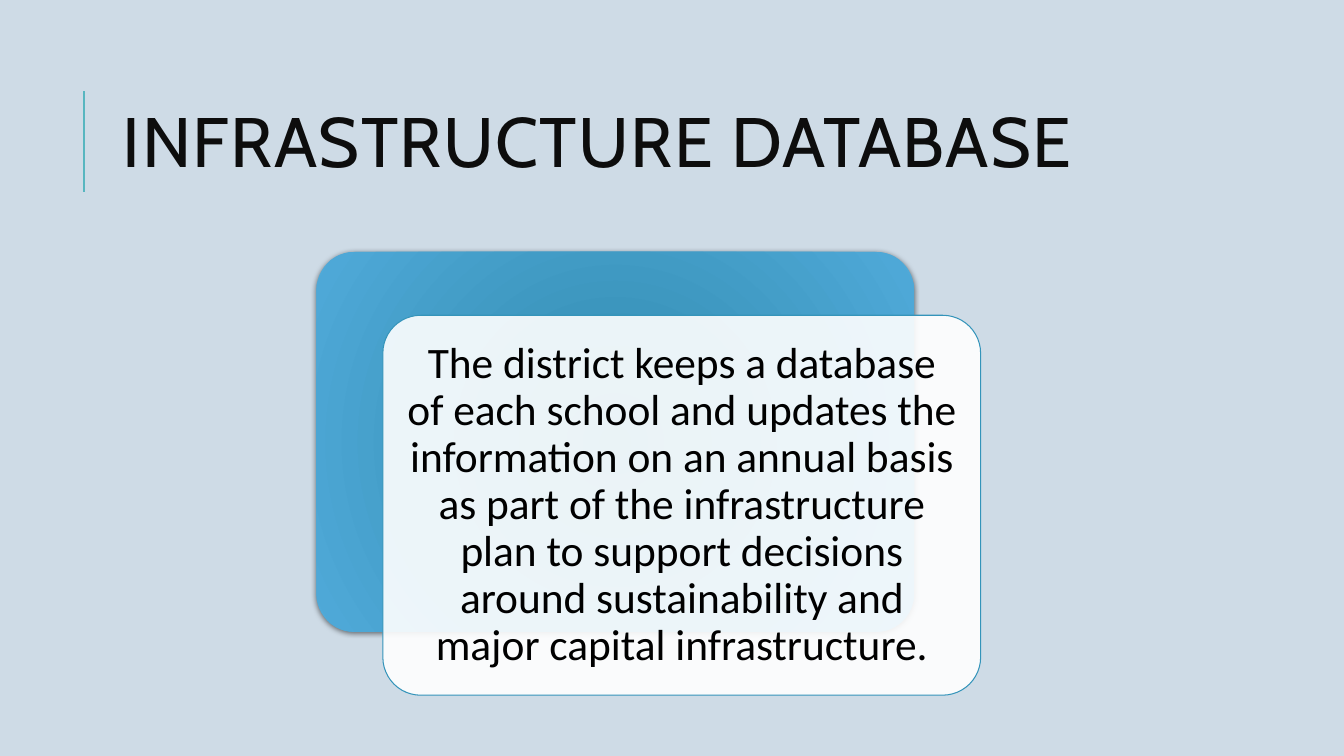
import pptx
import pptx.util
import pptx.oxml
import pptx.oxml.ns
import pptx.dml.color
import pptx.enum.shapes
import pptx.enum.text

Pt = pptx.util.Pt
SHAPES = pptx.enum.shapes.MSO_SHAPE
ALIGN = pptx.enum.text.PP_ALIGN
qn = pptx.oxml.ns.qn

# Content
HEADING = "INFRASTRUCTURE DATABASE"
STATEMENT = (
    "The district keeps a database of each school and updates the information "
    "on an annual basis as part of the infrastructure plan to support decisions "
    "around sustainability and major capital infrastructure."
)
COLORS = {
    "background": "CEDBE6",
    "accent": "58B6C0",
    "heading": "0D0D0D",
    "panel_center": "308AAD",
    "panel_edge": "50AAD9",
    "card": "FFFFFF",
    "card_border": "3494BA",
    "statement": "000000",
}

# Layout, in points
SLIDE_SIZE = (960, 540)
HEADING_BOX = (80.64, 46.08, 765.36, 118.08)
ACCENT_X, ACCENT_TOP, ACCENT_BOTTOM = 60, 64.8, 136.8
PANEL_LEFT, PANEL_TOP = 226, 180
PANEL_SIZE = (427, 271.4)
CARD_SHIFT = (47.5, 45.2)
CORNER = 0.1


def rgb(name):
    return pptx.dml.color.RGBColor.from_string(COLORS[name])


def xml(markup):
    namespace = pptx.oxml.ns.nsdecls("a")
    return pptx.oxml.parse_xml(markup.replace(" ", f" {namespace} ", 1))


def write(frame, text, *, font, size, color, align, line_spacing,
          space_after=0, tracking=0, inset=None):
    frame.word_wrap = True
    frame.auto_size = pptx.enum.text.MSO_AUTO_SIZE.NONE
    frame.vertical_anchor = pptx.enum.text.MSO_ANCHOR.MIDDLE
    if inset is not None:
        frame.margin_left = frame.margin_right = Pt(inset)
        frame.margin_top = frame.margin_bottom = Pt(inset)
    paragraph = frame.paragraphs[0]
    paragraph.alignment = align
    paragraph.line_spacing = line_spacing
    paragraph.space_before = Pt(0)
    paragraph.space_after = Pt(space_after)
    run = paragraph.add_run()
    run.text = text
    run.font.name = font
    run.font.size = Pt(size)
    run.font.color.rgb = rgb(color)
    if tracking:
        run.font._element.set("spc", str(tracking * 100))


def add_rounded(slide, left, top):
    rounded = slide.shapes.add_shape(
        SHAPES.ROUNDED_RECTANGLE, *map(Pt, (left, top, *PANEL_SIZE)))
    rounded.adjustments[0] = CORNER
    rounded.shadow.inherit = False
    return rounded


def main():
    deck = pptx.Presentation()
    deck.slide_width, deck.slide_height = map(Pt, SLIDE_SIZE)
    slide = deck.slides.add_slide(deck.slide_layouts.get_by_name("Title Only"))
    slide.background.fill.solid()
    slide.background.fill.fore_color.rgb = rgb("background")

    # Heading with accent line
    accent = slide.shapes.add_connector(
        pptx.enum.shapes.MSO_CONNECTOR.STRAIGHT,
        Pt(ACCENT_X), Pt(ACCENT_BOTTOM), Pt(ACCENT_X), Pt(ACCENT_TOP))
    accent.line.color.rgb = rgb("accent")
    accent.line.width = Pt(1.5)
    accent._element.spPr.append(xml("<a:effectLst />"))

    heading = slide.shapes.title
    heading.left, heading.top, heading.width, heading.height = map(Pt, HEADING_BOX)
    write(heading.text_frame, HEADING, font="Cabin", size=50, color="heading",
          align=ALIGN.LEFT, line_spacing=0.8, tracking=1)

    # Back panel: radial gradient and soft shadow
    panel = add_rounded(slide, PANEL_LEFT, PANEL_TOP)
    panel.line.fill.background()
    panel.fill.gradient()
    for stop, name in zip(panel.fill.gradient_stops, ("panel_center", "panel_edge")):
        stop.color.rgb = rgb(name)
    properties = panel._element.spPr
    gradient = properties.find(qn("a:gradFill"))
    gradient.replace(gradient.find(qn("a:lin")), xml(
        '<a:path path="circle">'
        '<a:fillToRect l="100000" t="100000" r="100000" b="100000"/></a:path>'))
    properties.find(qn("a:effectLst")).append(xml(
        f'<a:outerShdw blurRad="{Pt(4)}" dist="{Pt(1)}" dir="5400000" rotWithShape="0">'
        '<a:srgbClr val="000000"><a:alpha val="50000"/></a:srgbClr></a:outerShdw>'))

    # Front card with the statement
    card = add_rounded(slide, PANEL_LEFT + CARD_SHIFT[0], PANEL_TOP + CARD_SHIFT[1])
    card.fill.solid()
    card.fill.fore_color.rgb = rgb("card")
    card_color = card._element.spPr.find(qn("a:solidFill")).find(qn("a:srgbClr"))
    card_color.append(xml('<a:alpha val="90000"/>'))
    card.line.color.rgb = rgb("card_border")
    card.line.width = Pt(0.75)
    write(card.text_frame, STATEMENT, font="Calibri", size=31, color="statement",
          align=ALIGN.CENTER, line_spacing=0.9, inset=9.3)

    deck.save("out.pptx")


if __name__ == "__main__":
    main()
